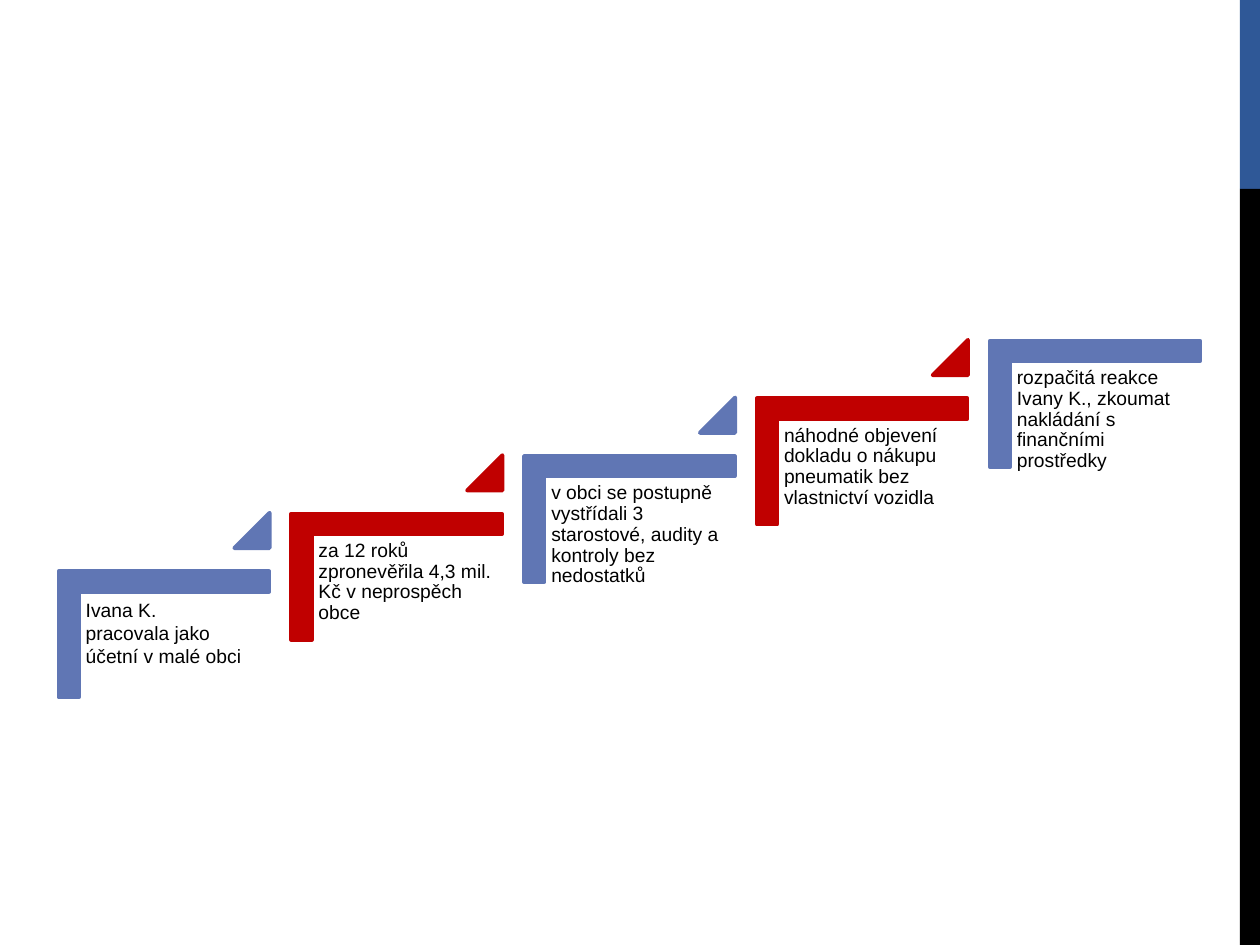
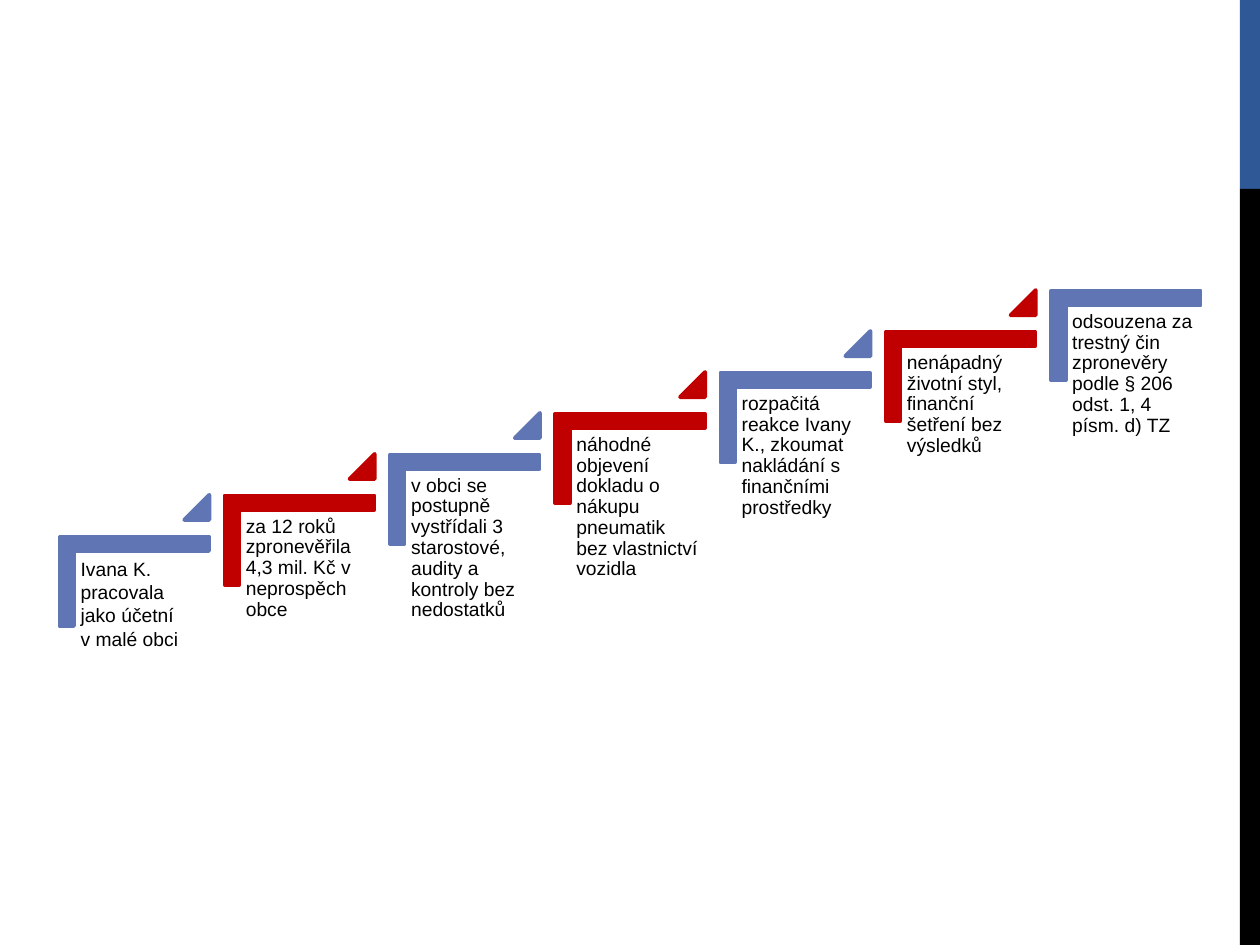
from pptx import Presentation
from pptx.dml.color import RGBColor
from pptx.enum.shapes import MSO_SHAPE
from pptx.enum.text import MSO_ANCHOR, PP_ALIGN
from pptx.util import Inches, Pt

RECTANGLE = MSO_SHAPE.RECTANGLE
CORNER = MSO_SHAPE.CORNER
TRIANGLE = MSO_SHAPE.ISOSCELES_TRIANGLE
TOP, LEFT = MSO_ANCHOR.TOP, PP_ALIGN.LEFT

# Shared look
STEP_COLORS = ("6076B4", "C00000")
BAND_BLUE, BLACK = "2F5897", "000000"
TEXT_FORMAT = {"name": "Arial", "size": Pt(11)}
INSET = Inches(0.05)
FRAME_FORMAT = {
    "margin_left": INSET, "margin_right": INSET,
    "margin_top": INSET, "margin_bottom": INSET,
    "word_wrap": True, "vertical_anchor": TOP,
}

# Wording: each step is a list of paragraphs
MIDDLE_STEPS = [
    ["za 12 roků zpronevěřila 4,3 mil. Kč v neprospěch obce"],
    ["v obci se postupně vystřídali 3 starostové, audity a kontroly bez nedostatků"],
    ["náhodné objevení dokladu o nákupu pneumatik bez vlastnictví vozidla"],
    ["rozpačitá reakce Ivany K., zkoumat nakládání s finančními prostředky"],
]
FIVE_STEPS = [["Ivana K.", "pracovala jako účetní v malé obci"], *MIDDLE_STEPS]
SEVEN_STEPS = [
    ["Ivana K.", "pracovala jako účetní\nv malé obci"],
    *MIDDLE_STEPS,
    ["nenápadný životní styl, finanční šetření bez výsledků"],
    ["odsouzena za trestný čin zpronevěry podle § 206 odst. 1, 4 písm. d) TZ"],
]


def rgb(hex_color):
    return RGBColor.from_string(hex_color)


def set_format(target, values):
    for name, value in values.items():
        setattr(target, name, value)


def add_filled(slide, kind, left, top, width, height, color, outline=0):
    shape = slide.shapes.add_shape(
        kind, Inches(left), Inches(top), Inches(width), Inches(height))
    shape.shadow.inherit = False
    shape.fill.solid()
    shape.fill.fore_color.rgb = rgb(color)
    if outline:
        shape.line.color.rgb = rgb(color)
        shape.line.width = Pt(outline)
    else:
        shape.line.fill.background()
    return shape


def add_side_band(slide):
    add_filled(slide, RECTANGLE, 9.84, 0, 0.16, 1.5, BAND_BLUE)
    add_filled(slide, RECTANGLE, 9.84, 1.5, 0.16, 6, BLACK)


def add_step_text(slide, left, top, width, height, paragraphs):
    box = slide.shapes.add_textbox(
        Inches(left), Inches(top), Inches(width), Inches(height))
    frame = box.text_frame
    set_format(frame, FRAME_FORMAT)
    for index, wording in enumerate(paragraphs):
        paragraph = frame.add_paragraph() if index else frame.paragraphs[0]
        paragraph.text = wording
        paragraph.alignment = LEFT
        if len(paragraphs) == 1:
            paragraph.line_spacing = 0.9
        for run in paragraph.runs:
            set_format(run.font, TEXT_FORMAT)
            run.font.color.rgb = rgb(BLACK)


def add_staircase(slide, steps, first, last, scale):
    """Climb from first to last (left, top of a corner); scale is its arm."""
    gaps = len(steps) - 1
    rise_x, rise_y = ((end - start) / gaps for start, end in zip(first, last))
    for index, paragraphs in enumerate(steps):
        left, top = first[0] + index * rise_x, first[1] + index * rise_y
        color = STEP_COLORS[index % len(STEP_COLORS)]

        # Corner lying under the text
        corner = add_filled(
            slide, CORNER, left, top, scale, 1.67 * scale, color, 2.25)
        corner.rotation = 90
        for side in range(2):
            corner.adjustments[side] = 0.161

        add_step_text(slide, left - 0.17 * scale, top + 0.5 * scale,
                      1.51 * scale, 1.32 * scale, paragraphs)

        # Pointer to the next step
        if index < gaps:
            pointer = add_filled(
                slide, TRIANGLE, left + 1.06 * scale, top - 0.13 * scale,
                0.28 * scale, 0.28 * scale, color, 2.25)
            pointer.adjustments[0] = 1


def main():
    deck = Presentation()
    deck.slide_width, deck.slide_height = Inches(10), Inches(7.5)
    blank = deck.slide_layouts[6]
    staircases = [
        (FIVE_STEPS, (0.8, 4.2), (8.19, 2.37), 1),
        (SEVEN_STEPS, (0.71, 4.02), (8.58, 2.07), 0.71),
    ]
    for steps, first, last, scale in staircases:
        slide = deck.slides.add_slide(blank)
        add_side_band(slide)
        add_staircase(slide, steps, first, last, scale)
    deck.save("out.pptx")


if __name__ == "__main__":
    main()
